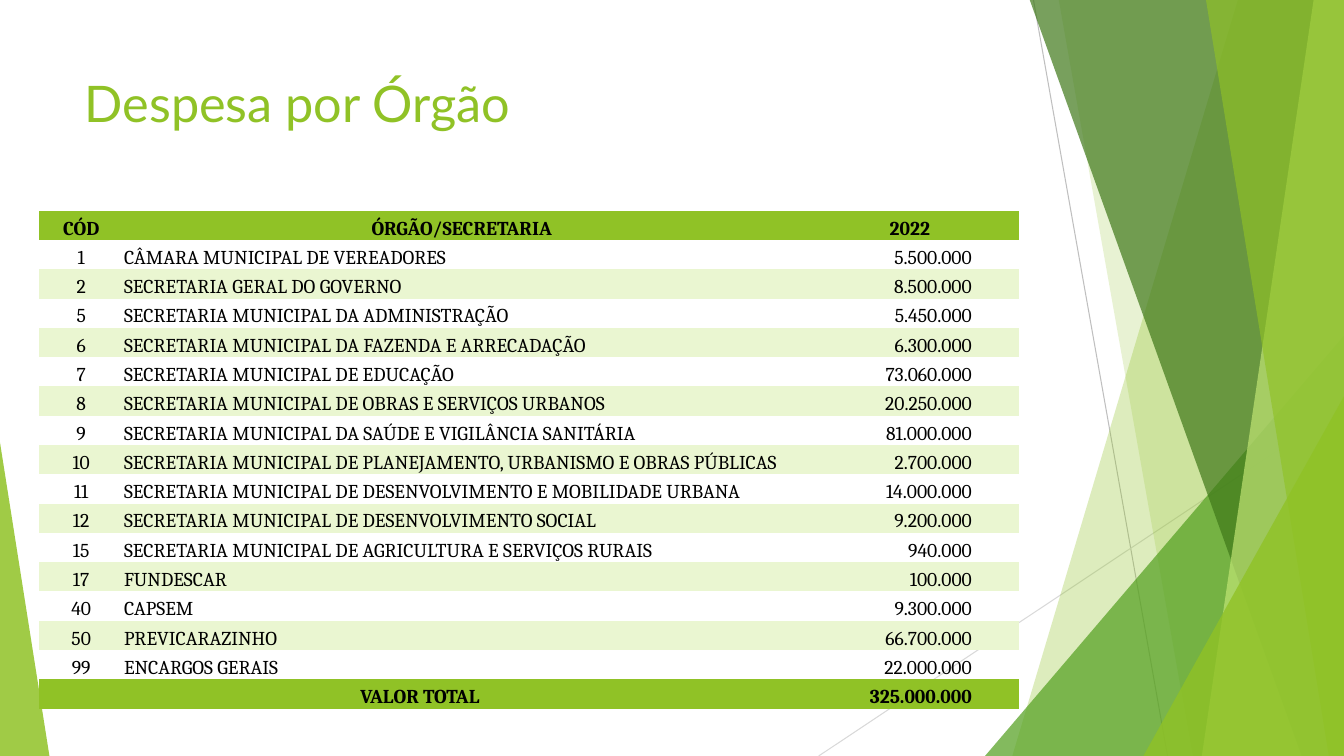
"""Build the slide of municipal spending by department."""
from lxml import etree
from pptx import Presentation
from pptx import util as u
from pptx.dml.color import RGBColor
from pptx.enum import shapes, text
from pptx.oxml import ns

LIME = RGBColor(0x90, 0xC2, 0x26)
PALE = RGBColor(0xEA, 0xF6, 0xD1)
LEAF = RGBColor(0x54, 0xA0, 0x21)
MOSS = RGBColor(0x3F, 0x78, 0x19)
MINT = RGBColor(0xC0, 0xE4, 0x74)
GREY = RGBColor(0xBF, 0xBF, 0xBF)
SILVER = RGBColor(0xD9, 0xD9, 0xD9)
BLACK = RGBColor(0, 0, 0)
LEFT, MID, RIGHT = text.PP_ALIGN.LEFT, text.PP_ALIGN.CENTER, text.PP_ALIGN.RIGHT
WIDE, HIGH, EDGE = 13.33, 7.5, -0.01
PLAIN = "{2D5ABB26-0587-4C30-8999-92F81FD0307C}"

LINES = [
    (10.25, 0, 11.58, HIGH, GREY),
    (WIDE, 4.03, 8.12, HIGH, SILVER),
]
BACK = [(12.28, 10.04, LIME, 30), (10.5, 11.83, LIME, 20)]
FRONT = [
    (10.21, 12.91, MOSS, 70),
    (13.03, 11.92, MINT, 70),
    (11.96, 13.18, LIME, 65),
]
HEAD = ("CÓD", "ÓRGÃO/SECRETARIA", "2022")
ROWS = [
    ("1", "CÂMARA MUNICIPAL DE VEREADORES", "5.500.000"),
    ("2", "SECRETARIA GERAL DO GOVERNO", "8.500.000"),
    ("5", "SECRETARIA MUNICIPAL DA ADMINISTRAÇÃO", "5.450.000"),
    ("6", "SECRETARIA MUNICIPAL DA FAZENDA E ARRECADAÇÃO", "6.300.000"),
    ("7", "SECRETARIA MUNICIPAL DE EDUCAÇÃO", "73.060.000"),
    ("8", "SECRETARIA MUNICIPAL DE OBRAS E SERVIÇOS URBANOS", "20.250.000"),
    ("9", "SECRETARIA MUNICIPAL DA SAÚDE E VIGILÂNCIA SANITÁRIA", "81.000.000"),
    ("10", "SECRETARIA MUNICIPAL DE PLANEJAMENTO, URBANISMO E OBRAS PÚBLICAS", "2.700.000"),
    ("11", "SECRETARIA MUNICIPAL DE DESENVOLVIMENTO E MOBILIDADE URBANA", "14.000.000"),
    ("12", "SECRETARIA MUNICIPAL DE DESENVOLVIMENTO SOCIAL", "9.200.000"),
    ("15", "SECRETARIA MUNICIPAL DE AGRICULTURA E SERVIÇOS RURAIS", "940.000"),
    ("17", "FUNDESCAR", "100.000"),
    ("40", "CAPSEM", "9.300.000"),
    ("50", "PREVICARAZINHO", "66.700.000"),
    ("99", "ENCARGOS GERAIS", "22.000.000"),
]
TOTAL = ("VALOR TOTAL", "", "325.000.000")


def write(frame, words, font="Cambria", size=14, color=BLACK, bold=False, align=LEFT):
    para = frame.paragraphs[0]
    para.alignment = align
    run = para.add_run()
    run.text = words
    run.font.name, run.font.size = font, u.Pt(size)
    run.font.bold, run.font.color.rgb = bold, color


class Deck:
    def __init__(self):
        self.show = Presentation()
        self.show.slide_width, self.show.slide_height = u.Inches(WIDE), u.Inches(HIGH)
        self.slide = self.show.slides.add_slide(self.show.slide_layouts[5])
        self.items = self.slide.shapes

    def title(self, words, left, top, width, height):
        box = self.items.title
        box.left, box.top = u.Inches(left), u.Inches(top)
        box.width, box.height = u.Inches(width), u.Inches(height)
        box.text_frame.vertical_anchor = text.MSO_ANCHOR.TOP
        box.text_frame.word_wrap = True
        write(box.text_frame, words, font="Lato", size=36, color=LIME)

    def line(self, left, top, right, low, color):
        link = self.items.add_connector(
            shapes.MSO_CONNECTOR.STRAIGHT, *map(u.Inches, (left, top, right, low)))
        link.line.color.rgb, link.line.width = color, u.Pt(0.75)
        etree.SubElement(link._element.spPr, ns.qn("a:effectLst"))

    def paint(self, shape, color, alpha):
        shape.shadow.inherit = False
        shape.line.fill.background()
        shape.fill.solid()
        shape.fill.fore_color.rgb = color
        tone = shape._element.spPr.find(".//" + ns.qn("a:srgbClr"))
        etree.SubElement(tone, ns.qn("a:alpha")).set("val", str(alpha * 1000))

    def band(self, top, low, color, alpha):
        spots = [(top, EDGE), (WIDE, EDGE), (WIDE, HIGH), (low, HIGH)]
        spots = [(u.Inches(x), u.Inches(y)) for x, y in spots]
        pen = self.items.build_freeform(*spots[0], scale=1.0)
        pen.add_line_segments(spots[1:], close=True)
        self.paint(pen.convert_to_shape(), color, alpha)

    def wedge(self, left, top, width, tip, color, alpha):
        shape = self.items.add_shape(
            shapes.MSO_SHAPE.ISOSCELES_TRIANGLE,
            *map(u.Inches, (left, top, width, HIGH - top)))
        shape.adjustments[0] = tip
        self.paint(shape, color, alpha)

    def table(self, rows, left, top, widths, height):
        frame = self.items.add_table(
            len(rows), len(widths),
            *map(u.Inches, (left, top, sum(widths), height)))
        grid = frame.table
        grid.first_row = grid.horz_banding = False
        frame._element.find(".//" + ns.qn("a:tableStyleId")).text = PLAIN
        for col, width in zip(grid.columns, widths):
            col.width = u.Inches(width)
        last = len(rows) - 1
        for i, row in enumerate(rows):
            bold = i in (0, last)
            aligns = (MID, MID if bold else LEFT, RIGHT if i else MID)
            for j, words in enumerate(row):
                cell = grid.cell(i, j)
                self.cell(cell, LIME if bold else None if i % 2 else PALE)
                if aligns[j] == RIGHT:
                    cell.margin_right = u.Inches(0.47)
                if words:
                    write(cell.text_frame, words, bold=bold, align=aligns[j])
        grid.cell(last, 0).merge(grid.cell(last, 1))

    def cell(self, cell, color):
        cell.margin_left = cell.margin_right = cell.margin_top = u.Inches(0.01)
        cell.margin_bottom = 0
        cell.vertical_anchor = text.MSO_ANCHOR.BOTTOM
        if color is None:
            cell.fill.background()
        else:
            cell.fill.solid()
            cell.fill.fore_color.rgb = color


def main():
    deck = Deck()
    for line in LINES:
        deck.line(*line)
    for band in BACK:
        deck.band(*band)
    deck.wedge(9.77, 3.33, 3.56, 1, LEAF, 72)
    for band in FRONT:
        deck.band(*band)
    deck.wedge(11.34, 3.93, 1.99, 1, LIME, 80)
    deck.wedge(0, 4.39, 0.49, 0, LIME, 85)
    deck.title("Despesa por Órgão", 0.74, 0.67, 9.4, 1.44)
    deck.table([HEAD, *ROWS, TOTAL], 0.39, 2.09, (0.83, 6.72, 2.17), 4.94)
    deck.show.save("out.pptx")


if __name__ == "__main__":
    main()
